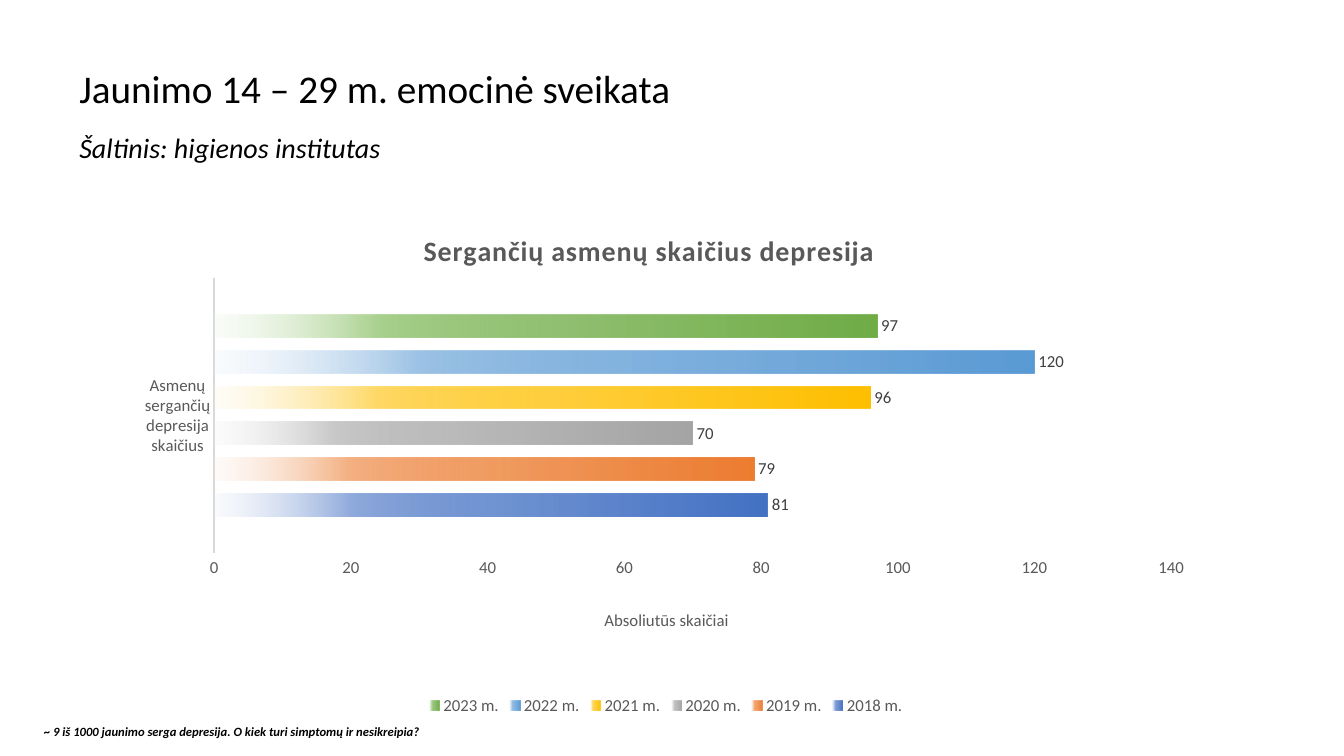
from lxml import etree
from pptx import Presentation, util as u
from pptx.chart.data import CategoryChartData
from pptx.dml.color import RGBColor
from pptx.enum import chart as ec, text as et
from pptx.oxml import parse_xml
from pptx.oxml.ns import nsdecls, qn

COLORS = {
    "text": "000000", "muted": "595959", "label": "404040", "axis": "D9D9D9",
}
YEARS = [
    ("2018 m.", 81, "4472C4", "8FAADC", "DAE3F3"),
    ("2019 m.", 79, "ED7D31", "F4B183", "FBE5D6"),
    ("2020 m.", 70, "A5A5A5", "C9C9C9", "EDEDED"),
    ("2021 m.", 96, "FFC000", "FFD966", "FFF2CC"),
    ("2022 m.", 120, "5B9BD5", "9DC3E6", "DEEBF7"),
    ("2023 m.", 97, "70AD47", "A9D18E", "E2F0D9"),
]


class SlideBuilder:
    font_name = "Calibri"

    def __init__(self, presentation):
        self.slide = presentation.slides.add_slide(presentation.slide_layouts[6])

    def style(self, font, size, color, bold=False, italic=False):
        font.name = self.font_name
        font.size = u.Pt(size)
        font.bold = bold
        font.italic = italic
        font.color.rgb = RGBColor.from_string(COLORS[color])

    def text(self, box, content, size, anchor=et.MSO_ANCHOR.TOP, spacing=1.0, **look):
        shape = self.slide.shapes.add_textbox(*map(u.Cm, box))
        frame = shape.text_frame
        frame.word_wrap = True
        frame.vertical_anchor = anchor
        paragraph = frame.paragraphs[0]
        paragraph.line_spacing = spacing
        run = paragraph.add_run()
        run.text = content
        self.style(run.font, size, "text", **look)

    def place(self, parent, index, x, y, width=None, height=None):
        for old in parent.findall(qn("c:layout")):
            parent.remove(old)
        layout = parse_xml(f"<c:layout {nsdecls('c')}><c:manualLayout/></c:layout>")
        settings = [("xMode", "edge"), ("yMode", "edge"), ("x", x), ("y", y)]
        if width:
            settings = [("layoutTarget", "inner"), *settings, ("w", width), ("h", height)]
        for name, value in settings:
            etree.SubElement(layout[0], qn(f"c:{name}")).set("val", str(value))
        parent.insert(index, layout)

    def chart_caption(self, title, content, size, x, y, bold=False, tracking=0):
        run = title.text_frame.paragraphs[0].add_run()
        run.text = content
        self.style(run.font, size, "muted", bold=bold)
        run.font._element.set("spc", str(tracking))
        self.place(title._element, 1, x, y)

    def gradient(self, series, strong, middle, pale):
        stops = [(0, strong, 100), (51, strong, 75), (75, middle, 100), (100, pale, 15)]
        marks = "".join(
            f'<a:gs pos="{position * 1000}"><a:srgbClr val="{color}">'
            f'<a:alpha val="{alpha * 1000}"/></a:srgbClr></a:gs>'
            for position, color, alpha in stops
        )
        series._element.get_or_add_spPr().insert(0, parse_xml(
            f"<a:gradFill {nsdecls('a')}><a:gsLst>{marks}</a:gsLst>"
            '<a:lin ang="10800000" scaled="1"/></a:gradFill>'
        ))

    def axis(self, axis):
        axis.has_major_gridlines = False
        axis.major_tick_mark = axis.minor_tick_mark = ec.XL_TICK_MARK.NONE
        self.style(axis.tick_labels.font, 12, "muted")

    def bar_chart(self, box, category, years, title, value_title):
        data = CategoryChartData()
        data.categories = [category]
        for name, value, *_ in years:
            data.add_series(name, [value])
        chart = self.slide.shapes.add_chart(
            ec.XL_CHART_TYPE.BAR_CLUSTERED, *map(u.Cm, box), data).chart
        self.style(chart.font, 10, "text")
        chart.has_title = True
        self.chart_caption(chart.chart_title, title, 20, 0.27, 0.05, True, 50)
        chart.has_legend = True
        chart.legend.position = ec.XL_LEGEND_POSITION.BOTTOM
        chart.legend.include_in_layout = False
        self.style(chart.legend.font, 12, "muted")

        plot = chart.plots[0]
        plot.vary_by_categories = False
        plot.gap_width, plot.overlap = 326, -58
        for series, (_, _, *shades) in zip(plot.series, years):
            series.invert_if_negative = False
            self.gradient(series, *shades)
            labels = series.data_labels
            labels.show_value = True
            labels.position = ec.XL_LABEL_POSITION.OUTSIDE_END
            self.style(labels.font, 12, "label")

        self.axis(chart.category_axis)
        line = chart.category_axis.format.line
        line.color.rgb = RGBColor.from_string(COLORS["axis"])
        line.width = u.Pt(1.5)
        value_axis = chart.value_axis
        self.axis(value_axis)
        value_axis.minimum_scale, value_axis.maximum_scale = 0, 140
        value_axis.major_unit = 20
        value_axis.format.line.fill.background()
        self.chart_caption(value_axis.axis_title, value_title, 12, 0.44, 0.78)
        plot_area = chart._chartSpace.chart.plotArea
        self.place(plot_area, 0, 0.08, 0.15, 0.89, 0.53)


def main():
    presentation = Presentation()
    presentation.slide_width = u.Cm(33.87)
    presentation.slide_height = u.Cm(19.05)
    builder = SlideBuilder(presentation)
    builder.text((1.75, 0.79, 30.38, 3), "Jaunimo 14 – 29 m. emocinė sveikata", 28,
                 anchor=et.MSO_ANCHOR.MIDDLE, spacing=0.9)
    builder.bar_chart((3.23, 5.03, 27.1, 13.11), "Asmenų sergančių depresija skaičius",
                      YEARS, "Sergančių asmenų skaičius depresija", "Absoliutūs skaičiai")
    builder.text((0.86, 18.11, 25.27, 0.64),
                 "~ 9 iš 1000 jaunimo serga depresija. O kiek turi simptomų ir nesikreipia?",
                 9, bold=True, italic=True)
    builder.text((1.75, 3.25, 30.38, 1.02), "Šaltinis: higienos institutas", 20,
                 spacing=0.9, italic=True)
    presentation.save("out.pptx")


if __name__ == "__main__":
    main()
